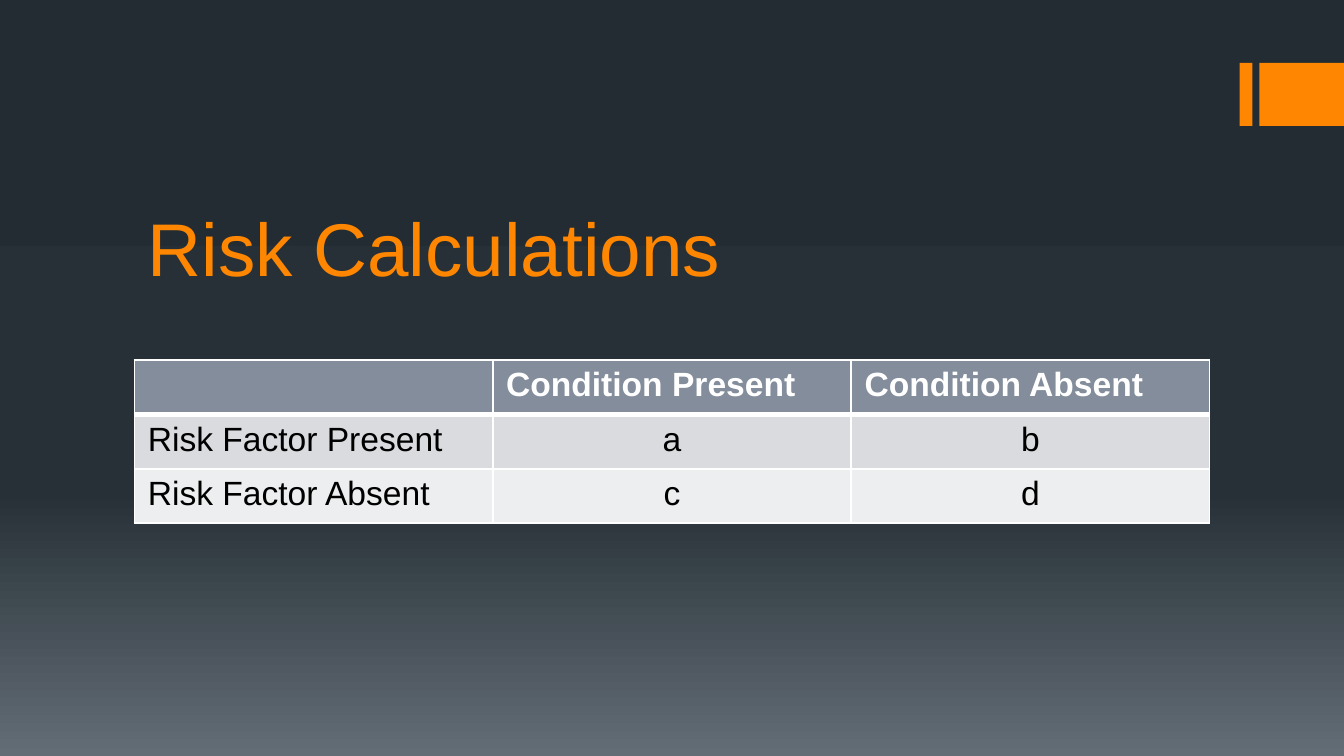
from copy import deepcopy

from lxml.etree import SubElement
from pptx import Presentation
from pptx.dml.color import RGBColor
from pptx.enum.shapes import MSO_SHAPE
from pptx.enum.text import MSO_ANCHOR, MSO_AUTO_SIZE, PP_ALIGN
from pptx.oxml.ns import qn
from pptx.util import Cm, Pt

COLORS = {
    "night": "242C33",
    "slate": "273037",
    "mist": "636D76",
    "accent": "FF8600",
    "header": "838D9B",
    "band_dark": "D9DBDE",
    "band_light": "EDEEEF",
    "white": "FFFFFF",
    "black": "000000",
}


class SlideBuilder:
    font_name = "Arial"

    def __init__(self, slide):
        self.slide = slide

    def color(self, name):
        return RGBColor.from_string(COLORS[name])

    def background(self, stops):
        fill = self.slide.background.fill
        fill.gradient()
        fill.gradient_angle = 270
        stop_list = self.slide.element.xpath(".//a:gsLst")[0]
        stop_list.append(deepcopy(stop_list[0]))
        for stop, (position, name) in zip(fill.gradient_stops, stops):
            stop.color.rgb = self.color(name)
            stop.position = position

    def bar(self, left, top, width, height):
        shape = self.slide.shapes.add_shape(
            MSO_SHAPE.RECTANGLE, Cm(left), Cm(top), Cm(width), Cm(height))
        shape.shadow.inherit = False
        shape.fill.solid()
        shape.fill.fore_color.rgb = self.color("accent")
        shape.line.fill.background()

    def run(self, paragraph, text, size, color, bold=False):
        run = paragraph.add_run()
        run.text = text
        run.font.name = self.font_name
        run.font.size = Pt(size)
        run.font.bold = bold
        run.font.color.rgb = self.color(color)

    def title(self, text, left, top, width, height):
        shape = self.slide.shapes.title
        shape.left, shape.top = Cm(left), Cm(top)
        shape.width, shape.height = Cm(width), Cm(height)
        frame = shape.text_frame
        frame.word_wrap = True
        frame.auto_size = MSO_AUTO_SIZE.NONE
        frame.vertical_anchor = MSO_ANCHOR.BOTTOM
        paragraph = frame.paragraphs[0]
        paragraph.alignment = PP_ALIGN.LEFT
        self.run(paragraph, text, 40, "accent")

    def borders(self, cell, widths):
        properties = cell._tc.get_or_add_tcPr()
        for side, width in widths.items():
            line = SubElement(properties, qn(f"a:ln{side}"), w=str(Pt(width)))
            fill = SubElement(line, qn("a:solidFill"))
            SubElement(fill, qn("a:srgbClr"), val=COLORS["white"])

    def table(self, rows, fills, left, top, width, row_height):
        table = self.slide.shapes.add_table(
            len(rows), len(rows[0]), Cm(left), Cm(top),
            Cm(width), Cm(row_height * len(rows))).table
        for row_index, (texts, fill) in enumerate(zip(rows, fills)):
            is_header = row_index == 0
            table.rows[row_index].height = Cm(row_height)
            widths = {"L": 1, "R": 1, "T": 3 if row_index == 1 else 1,
                      "B": 3 if is_header else 1}
            for column_index, text in enumerate(texts):
                cell = table.cell(row_index, column_index)
                self.borders(cell, widths)
                cell.fill.solid()
                cell.fill.fore_color.rgb = self.color(fill)
                if not text:
                    continue
                paragraph = cell.text_frame.paragraphs[0]
                centred = not is_header and column_index > 0
                paragraph.alignment = PP_ALIGN.CENTER if centred else PP_ALIGN.LEFT
                self.run(paragraph, text, 18,
                         "white" if is_header else "black", is_header)


def main():
    presentation = Presentation()
    presentation.slide_width = Cm(25.4)
    presentation.slide_height = Cm(14.29)
    slide = presentation.slides.add_slide(presentation.slide_layouts[5])

    builder = SlideBuilder(slide)
    builder.background([(0, "night"), (0.65, "slate"), (1, "mist")])
    for left, width in [(23.43, 0.24), (23.8, 1.6)]:
        builder.bar(left, 1.19, width, 1.19)
    builder.title("Risk Calculations", 2.54, 3.23, 20.32, 2.41)
    builder.table(
        [["", "Condition Present", "Condition Absent"],
         ["Risk Factor Present", "a", "b"],
         ["Risk Factor Absent", "c", "d"]],
        ["header", "band_dark", "band_light"],
        2.54, 6.8, 20.32, 1.03)

    presentation.save("out.pptx")


if __name__ == "__main__":
    main()
